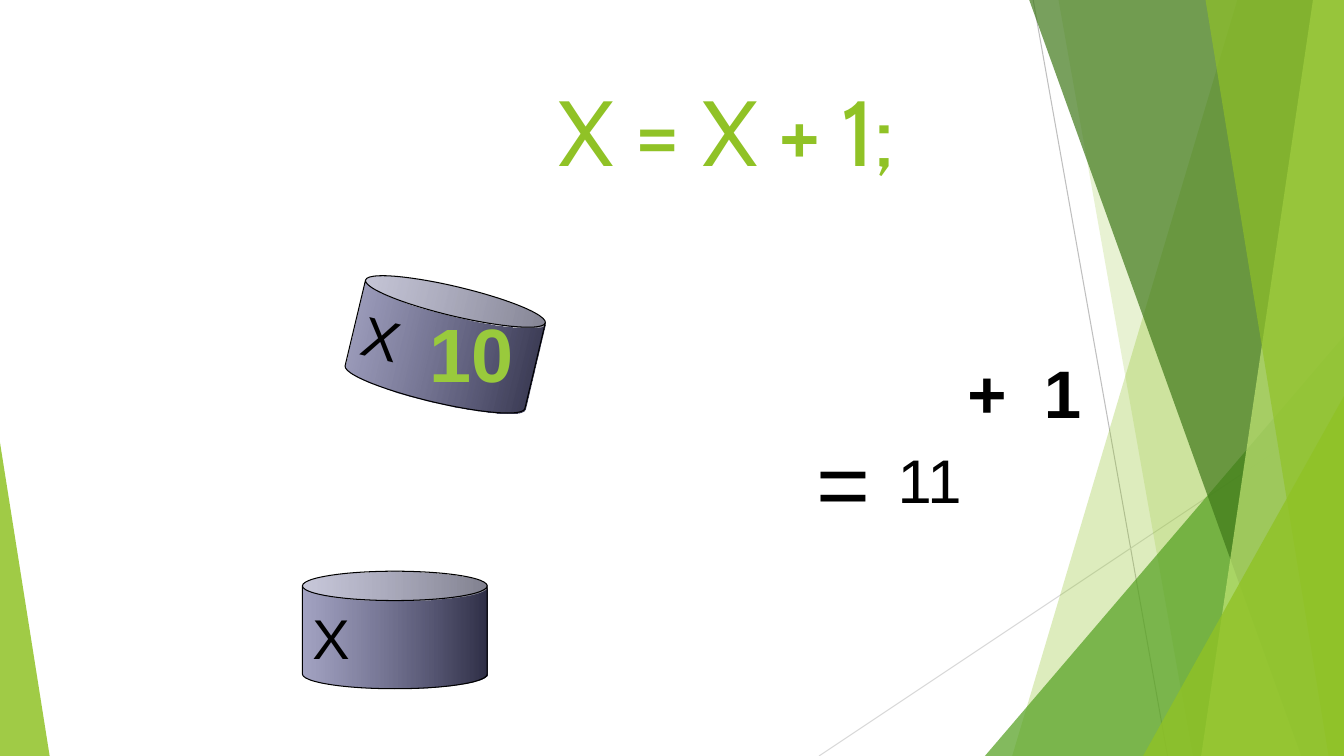
"""Build the slide that explains the assignment X = X + 1."""
from lxml.etree import SubElement
from pptx import Presentation
from pptx.dml.color import RGBColor
from pptx.enum.shapes import MSO_CONNECTOR, MSO_SHAPE
from pptx.enum.text import MSO_ANCHOR, PP_ALIGN
from pptx.oxml.ns import qn
from pptx.util import Pt

WIDTH, HEIGHT = 960, 540
COLORS = {
    "green": "90C226", "leaf": "54A021", "forest": "3F7819", "lime": "C0E474",
    "value": "99CA3C", "black": "000000", "gray": "BFBFBF", "light_gray": "D9D9D9",
    "can_left": "666699", "can_right": "2F2F47",
}


def rgb(name):
    """Return the named colour."""
    return RGBColor.from_string(COLORS[name])


def set_alpha(parent, percent):
    """Set the opacity of the first colour inside an XML element."""
    color = next(parent.iter(qn("a:srgbClr")))
    SubElement(color, qn("a:alpha"), val=str(percent * 1000))


def fill_translucent(shape, color, opacity):
    """Give a shape a see-through fill and no outline."""
    shape.shadow.inherit = False
    shape.fill.solid()
    shape.fill.fore_color.rgb = rgb(color)
    shape.line.fill.background()
    set_alpha(shape._element.spPr, opacity)


def add_line(slide, start, end, color):
    """Draw a thin straight line."""
    line = slide.shapes.add_connector(
        MSO_CONNECTOR.STRAIGHT, *[Pt(value) for value in start + end])
    line.line.color.rgb = rgb(color)
    line.line.width = Pt(0.75)
    SubElement(line._element.spPr, qn("a:effectLst"))


def add_band(slide, top_left, bottom_left, color, opacity):
    """Draw a slanted band that reaches the right edge of the slide."""
    builder = slide.shapes.build_freeform(Pt(top_left), Pt(-0.6))
    corners = [(WIDTH, -0.6), (WIDTH, HEIGHT), (bottom_left, HEIGHT)]
    builder.add_line_segments([(Pt(x), Pt(y)) for x, y in corners], close=True)
    fill_translucent(builder.convert_to_shape(), color, opacity)


def add_triangle(slide, left, width, height, apex, color, opacity):
    """Draw a triangle that stands on the bottom edge of the slide."""
    shape = slide.shapes.add_shape(
        MSO_SHAPE.ISOSCELES_TRIANGLE, Pt(left), Pt(HEIGHT - height), Pt(width), Pt(height))
    shape.adjustments[0] = apex
    fill_translucent(shape, color, opacity)


def write_text(shape, text, size, font="Arial", color="black", bold=False,
               align=PP_ALIGN.LEFT, anchor=MSO_ANCHOR.TOP, wrap=False, tab=None):
    """Write one formatted paragraph into a shape."""
    frame = shape.text_frame
    frame.word_wrap = wrap
    frame.vertical_anchor = anchor
    paragraph = frame.paragraphs[0]
    paragraph.text = text
    paragraph.alignment = align
    if tab:
        stops = SubElement(paragraph._p.get_or_add_pPr(), qn("a:tabLst"))
        SubElement(stops, qn("a:tab"), pos=str(Pt(tab)), algn="l")
    paragraph.font.size = Pt(size)
    paragraph.font.name = font
    paragraph.font.bold = bold
    paragraph.font.color.rgb = rgb(color)


def add_text(slide, left, top, width, height, text, **text_format):
    """Add a text box."""
    box = slide.shapes.add_textbox(Pt(left), Pt(top), Pt(width), Pt(height))
    write_text(box, text, **text_format)


def add_variable_can(slide, left, top, rotation=0):
    """Draw the can that stands for the variable X."""
    can = slide.shapes.add_shape(MSO_SHAPE.CAN, Pt(left), Pt(top), Pt(132), Pt(84))
    can.rotation = rotation
    can.shadow.inherit = False
    can.fill.gradient()
    can.fill.gradient_angle = 0
    for stop, color in zip(can.fill.gradient_stops, ("can_left", "can_right")):
        stop.color.rgb = rgb(color)
    set_alpha(can._element.spPr, 60)
    can.line.color.rgb = rgb("black")
    can.line.width = Pt(0.75)
    write_text(can, "X", size=40, anchor=MSO_ANCHOR.MIDDLE)


def add_backdrop(slide):
    """Draw the green facets at the sides of the slide."""
    add_line(slide, (738, 0), (834, HEIGHT), "gray")
    add_line(slide, (WIDTH, 290), (585, HEIGHT), "light_gray")
    add_band(slide, 884, 723, "green", 30)
    add_band(slide, 756, 852, "green", 20)
    add_triangle(slide, 703.5, 256.5, 300, 1, "leaf", 72)
    add_band(slide, 735, 929.5, "forest", 70)
    add_band(slide, 938, 858, "lime", 70)
    add_band(slide, 861, 949, "green", 65)
    add_triangle(slide, 816.5, 143.5, 257, 1, "green", 80)
    add_triangle(slide, 0, 35.5, 224, 0, "green", 85)


def main():
    """Build and save the slide."""
    presentation = Presentation()
    presentation.slide_width, presentation.slide_height = Pt(WIDTH), Pt(HEIGHT)
    slide = presentation.slides.add_slide(presentation.slide_layouts[6])
    add_backdrop(slide)
    add_text(slide, 222, 49.5, 594, 113, "X = X + 1;", size=66, font="Cabin",
             color="green", align=PP_ALIGN.CENTER, wrap=True)
    add_variable_can(slide, 252, 204, rotation=13.4)
    add_text(slide, 300, 216, 78, 72, "10", size=54, color="value", bold=True)
    add_text(slide, 684, 247.5, 100, 65, "+\t1", size=48, bold=True, tab=54.5)
    add_text(slide, 576, 300, 71, 86, "=", size=66)
    add_variable_can(slide, 216, 408)
    add_text(slide, 632, 312, 64, 60.5, "11", size=44, align=PP_ALIGN.CENTER)
    presentation.save("out.pptx")


if __name__ == "__main__":
    main()
